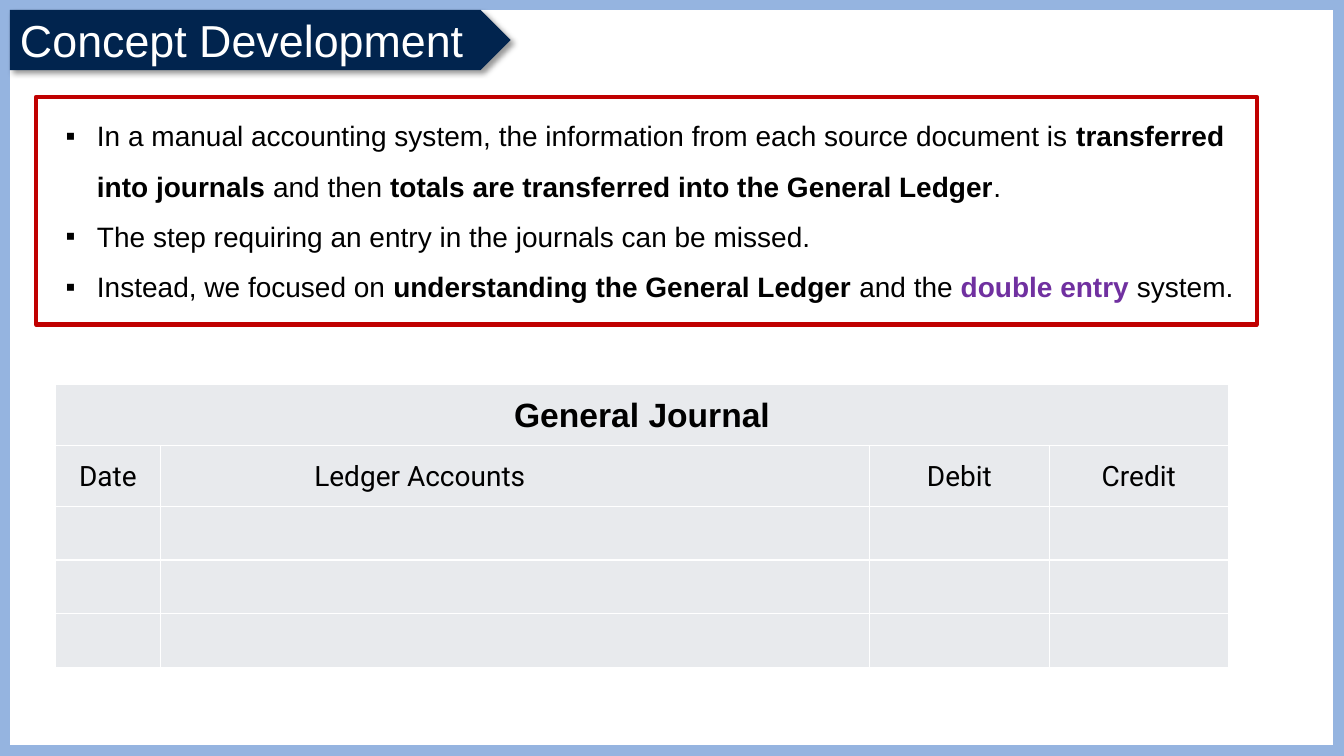
from lxml.etree import SubElement
from pptx import Presentation
from pptx.dml.color import RGBColor
from pptx.enum.shapes import MSO_SHAPE
from pptx.enum.text import MSO_ANCHOR, MSO_AUTO_SIZE, PP_ALIGN
from pptx.oxml import parse_xml
from pptx.oxml.ns import nsdecls, qn
from pptx.util import Cm, Pt

# Content
COLORS = {"frame": "95B4E0", "navy": "01244E", "red": "C00000", "white": "FFFFFF",
          "black": "000000", "purple": "7030A0", "cell": "E8EAED"}
TITLE = "Concept Development"
# Each bullet is a list of (text, bold, colour)
BULLETS = [
    [("In a manual accounting system, the information from each source document is ", False, "black"),
     ("transferred into journals ", True, "black"),
     ("and then ", False, "black"),
     ("totals are transferred into the General Ledger", True, "black"),
     (".", False, "black")],
    [("The step requiring an entry in the journals can be missed.", False, "black")],
    [("Instead, we focused on ", False, "black"),
     ("understanding the General Ledger ", True, "black"),
     ("and the ", False, "black"),
     ("double entry ", True, "purple"),
     ("system.", False, "black")],
]
JOURNAL_TITLE = "General Journal"
JOURNAL_HEADS = ["Date", "Ledger Accounts", "Debit", "Credit"]
COLUMN_WIDTHS = [2.64, 17.88, 4.52, 4.52]
ROW_HEIGHTS = [1.54, 1.54, 1.35, 1.35, 1.35]
HANGING = Cm(0.79)
LEDGER_INDENT = Cm(3.7)


def color(name):
    return RGBColor.from_string(COLORS[name])


def place(item, left, top, width, height):
    item.left, item.top, item.width, item.height = Cm(left), Cm(top), Cm(width), Cm(height)


def add_span(para, text, size, font="Arial", bold=False, shade="black"):
    span = para.add_run()
    span.text = text
    span.font.size, span.font.name, span.font.bold = Pt(size), font, bold
    span.font.color.rgb = color(shade)


def add_panel(kind, area, fill=None, line=None, line_width=0):
    panel = slide.shapes.add_shape(kind, *(Cm(length) for length in area))
    panel.shadow.inherit = False
    if fill:
        panel.fill.solid()
        panel.fill.fore_color.rgb = color(fill)
    else:
        panel.fill.background()
    if line:
        panel.line.color.rgb = color(line)
        panel.line.width = Pt(line_width)
    else:
        panel.line.fill.background()
    return panel


def style_cell(cell):
    properties = cell._tc.get_or_add_tcPr()
    for side in ("L", "R", "T", "B"):
        properties.append(parse_xml(
            f'<a:ln{side} {nsdecls("a")} w="12700"><a:solidFill>'
            f'<a:srgbClr val="{COLORS["white"]}"/></a:solidFill></a:ln{side}>'))
    cell.fill.solid()
    cell.fill.fore_color.rgb = color("cell")


def write_cell(cell, text, size, font, bold=False, align=PP_ALIGN.CENTER):
    cell.vertical_anchor = MSO_ANCHOR.MIDDLE
    cell.margin_left = cell.margin_right = Cm(0.18)
    cell.margin_top = cell.margin_bottom = 0
    para = cell.text_frame.paragraphs[0]
    para.alignment = align
    para.line_spacing = 1.07
    para.space_before = para.space_after = Pt(6)
    add_span(para, text, size, font, bold)
    return para


deck = Presentation()
deck.slide_width, deck.slide_height = Cm(33.87), Cm(19.05)
slide = deck.slides.add_slide(deck.slide_layouts[1])
title, body = slide.placeholders

# Slide frame, title banner and red box
add_panel(MSO_SHAPE.RECTANGLE, (0, 0, 33.87, 19.05), line="frame", line_width=15)
banner_area = (0.25, 0.25, 12.62, 1.52)
banner = add_panel(MSO_SHAPE.PENTAGON, banner_area, fill="navy")
effects = banner.element.spPr.find(qn("a:effectLst"))
shadow = SubElement(effects, qn("a:outerShdw"), blurRad=str(Pt(4)), dist=str(Pt(3)),
                    dir="2700000", algn="tl", rotWithShape="0")
shade = SubElement(shadow, qn("a:srgbClr"), val=COLORS["black"])
SubElement(shade, qn("a:alpha"), val="40000")
add_panel(MSO_SHAPE.RECTANGLE, (0.91, 2.44, 30.76, 5.74), line="red", line_width=3)

# Bring the placeholders in front of the panels
for holder in (title, body):
    holder.element.getparent().append(holder.element)
    holder.text_frame.word_wrap = True
    holder.text_frame.auto_size = MSO_AUTO_SIZE.NONE

# Title
place(title, *banner_area)
title.text_frame.vertical_anchor = MSO_ANCHOR.MIDDLE
heading = title.text_frame.paragraphs[0]
heading.alignment = PP_ALIGN.LEFT
add_span(heading, TITLE, 32, shade="white")

# Bullets
place(body, 1.4, 2.44, 30.27, 5.23)
body.text_frame.vertical_anchor = MSO_ANCHOR.TOP
for index, spans in enumerate(BULLETS):
    para = body.text_frame.add_paragraph() if index else body.text_frame.paragraphs[0]
    para.line_spacing = 1.5
    para.space_before = para.space_after = Pt(0)
    properties = para._p.get_or_add_pPr()
    properties.set("marL", str(HANGING))
    properties.set("indent", str(-HANGING))
    SubElement(properties, qn("a:buFont"), typeface="Arial")
    SubElement(properties, qn("a:buChar"), char="▪")
    for text, bold, shade_name in spans:
        add_span(para, text, 20, bold=bold, shade=shade_name)

# Journal table
journal = slide.shapes.add_table(
    len(ROW_HEIGHTS), len(COLUMN_WIDTHS), Cm(1.4), Cm(9.68),
    Cm(sum(COLUMN_WIDTHS)), Cm(sum(ROW_HEIGHTS))).table
journal.first_row = journal.horz_banding = False
for column, width in zip(journal.columns, COLUMN_WIDTHS):
    column.width = Cm(width)
for row, height in zip(journal.rows, ROW_HEIGHTS):
    row.height = Cm(height)
for cell in journal.iter_cells():
    style_cell(cell)
journal.cell(0, 0).merge(journal.cell(0, len(COLUMN_WIDTHS) - 1))
write_cell(journal.cell(0, 0), JOURNAL_TITLE, 24, "Arial", bold=True)
for index, head in enumerate(JOURNAL_HEADS):
    is_ledger = index == 1
    para = write_cell(journal.cell(1, index), head, 20, "Roboto",
                      align=PP_ALIGN.LEFT if is_ledger else PP_ALIGN.CENTER)
    if is_ledger:
        para._p.get_or_add_pPr().set("marL", str(LEDGER_INDENT))

deck.save("out.pptx")
